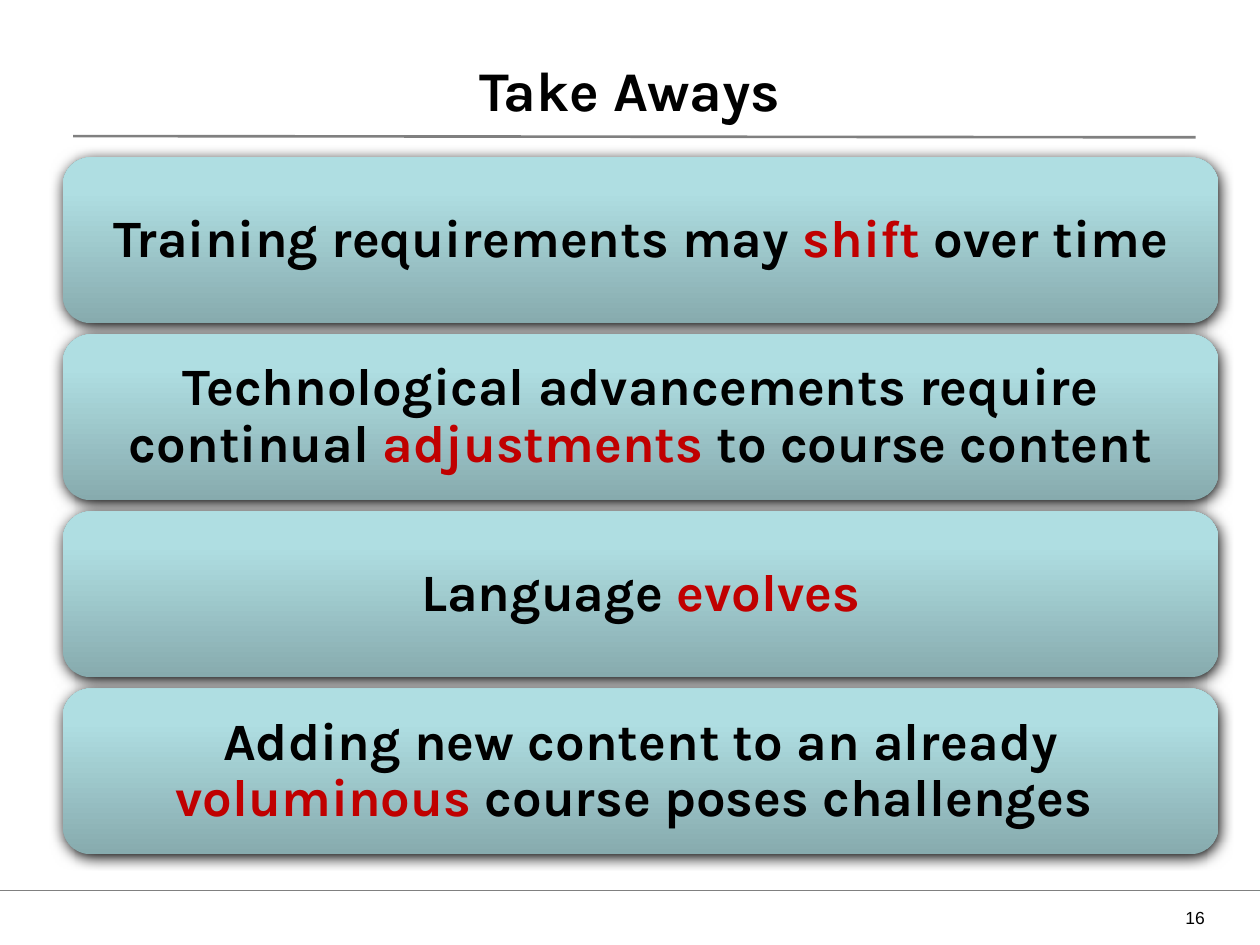
from lxml.etree import SubElement
from pptx import Presentation
from pptx.dml.color import RGBColor
from pptx.enum.shapes import MSO_CONNECTOR, MSO_SHAPE
from pptx.enum.text import MSO_ANCHOR, PP_ALIGN
from pptx.oxml.ns import qn
from pptx.util import Inches, Pt

COLORS = {
    "text": "000000",
    "accent": "C00000",
    "rule": "808080",
    "card_bottom": "87ABAE",
    "card_middle": "AFDEE2",
    "card_top": "AFE0E4",
    "shadow": "000000",
}
CARD_GRADIENT = [(0, "card_bottom"), (80, "card_middle"), (100, "card_top")]

# Each takeaway: text before the key word, the key word, text after it
TAKEAWAYS = [
    ("Training requirements may ", "shift", " over time"),
    ("Technological advancements require continual ", "adjustments", " to course content"),
    ("Language ", "evolves", ""),
    ("Adding new content to an already ", "voluminous", " course poses challenges "),
]


def add_run(paragraph, text, size, font="Karla", color="text", bold=True):
    run = paragraph.add_run()
    run.text = text
    run.font.name = font
    run.font.size = Pt(size)
    run.font.bold = bold
    run.font.color.rgb = RGBColor.from_string(COLORS[color])


def add_rule(slide, start_x, start_y, end_x, end_y, width):
    rule = slide.shapes.add_connector(
        MSO_CONNECTOR.STRAIGHT,
        Inches(start_x), Inches(start_y), Inches(end_x), Inches(end_y),
    )
    rule.line.color.rgb = RGBColor.from_string(COLORS["rule"])
    rule.line.width = Pt(width)
    SubElement(rule._element.spPr, qn("a:effectLst"))


def set_card_gradient(shape):
    """Fill from dark at the bottom edge to light at the top edge."""
    shape.fill.gradient()
    shape.fill.gradient_angle = 90
    stops = shape._element.spPr.find(qn("a:gradFill")).find(qn("a:gsLst"))
    for stop in list(stops):
        stops.remove(stop)
    for percent, color in CARD_GRADIENT:
        stop = SubElement(stops, qn("a:gs"), pos=str(percent * 1000))
        SubElement(stop, qn("a:srgbClr"), val=COLORS[color])


def set_card_shadow(shape):
    shape.shadow.inherit = False
    effects = shape._element.spPr.find(qn("a:effectLst"))
    shadow = SubElement(
        effects, qn("a:outerShdw"),
        blurRad=str(Pt(8.5)), dist=str(Pt(1)), dir=str(90 * 60000), rotWithShape="0",
    )
    SubElement(shadow, qn("a:srgbClr"), val=COLORS["shadow"])


def add_title(slide, text, left, top, width, height):
    title = slide.shapes.title
    title.left, title.top = Inches(left), Inches(top)
    title.width, title.height = Inches(width), Inches(height)
    title.text_frame.vertical_anchor = MSO_ANCHOR.MIDDLE
    paragraph = title.text_frame.paragraphs[0]
    paragraph.alignment = PP_ALIGN.CENTER
    add_run(paragraph, text, size=32)


def add_card(slide, takeaway, left, top, width, height):
    card = slide.shapes.add_shape(
        MSO_SHAPE.ROUNDED_RECTANGLE,
        Inches(left), Inches(top), Inches(width), Inches(height),
    )
    set_card_gradient(card)
    card.line.fill.background()
    set_card_shadow(card)

    frame = card.text_frame
    frame.word_wrap = True
    frame.vertical_anchor = MSO_ANCHOR.MIDDLE
    frame.margin_left = frame.margin_right = Inches(0.12)
    frame.margin_top = frame.margin_bottom = Inches(0.12)
    paragraph = frame.paragraphs[0]
    paragraph.alignment = PP_ALIGN.CENTER
    paragraph.line_spacing = 0.9
    for text, color in zip(takeaway, ("text", "accent", "text")):
        if text:
            add_run(paragraph, text, size=30, color=color)


def add_card_stack(slide, takeaways, left, top, width, height, gap):
    """Share the height equally between the cards, with a gap between them."""
    card_height = (height - gap * (len(takeaways) - 1)) / len(takeaways)
    for index, takeaway in enumerate(takeaways):
        card_top = top + index * (card_height + gap)
        add_card(slide, takeaway, left, card_top, width, card_height)


def add_page_number(slide, number, left, top, width, height):
    box = slide.shapes.add_textbox(
        Inches(left), Inches(top), Inches(width), Inches(height)
    )
    box.text_frame.word_wrap = True
    paragraph = box.text_frame.paragraphs[0]
    paragraph.alignment = PP_ALIGN.RIGHT
    add_run(paragraph, number, size=10, font="Arial", bold=False)


def main():
    presentation = Presentation()
    presentation.slide_width = Inches(10)
    presentation.slide_height = Inches(7.5)
    title_only = presentation.slide_layouts[5]
    slide = presentation.slides.add_slide(title_only)

    add_rule(slide, 0.58, 1.08, 9.49, 1.09, width=1.5)
    add_rule(slide, 0, 7.07, 10, 7.07, width=0.75)
    add_title(slide, "Take Aways", 0.5, 0.08, 9, 1.25)
    add_card_stack(slide, TAKEAWAYS, 0.5, 1.25, 9.17, 5.53, gap=0.09)
    add_page_number(slide, "16", 7.58, 7.15, 2.08, 0.42)

    presentation.save("out.pptx")


if __name__ == "__main__":
    main()
